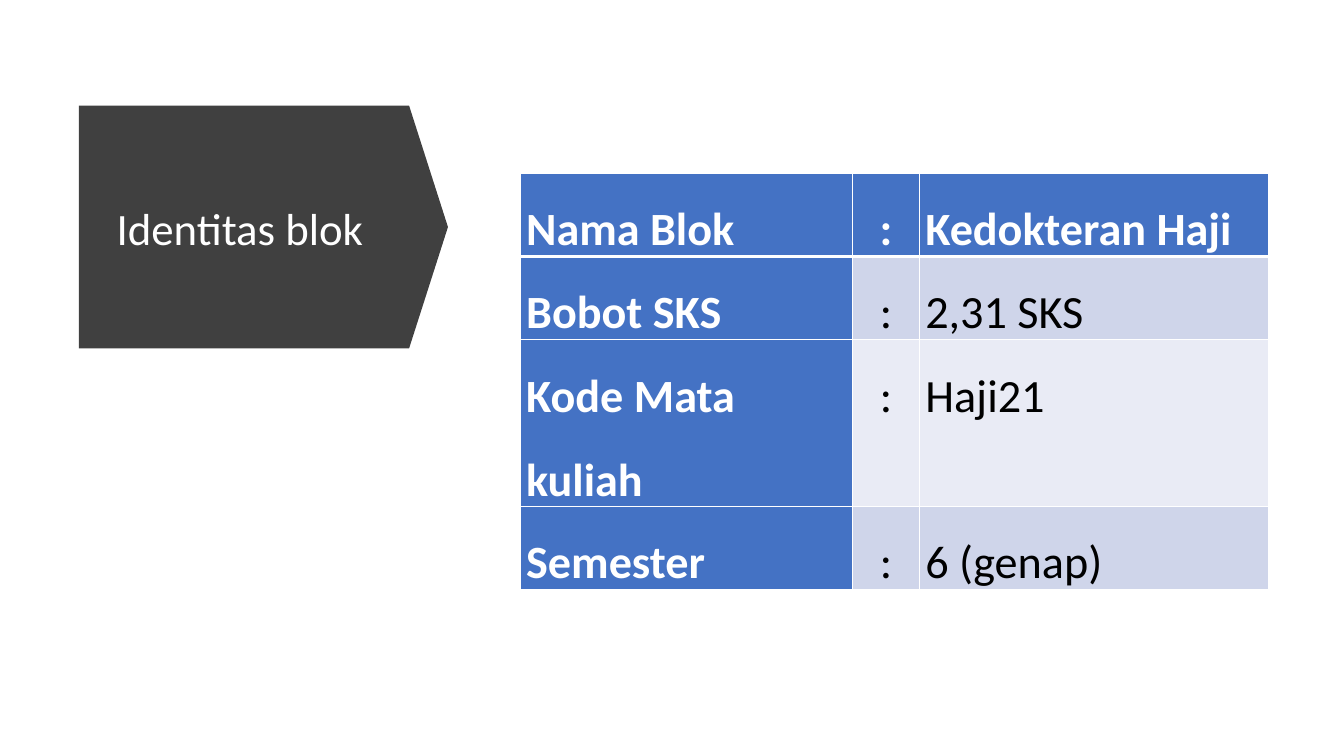
from dataclasses import dataclass

from lxml import etree
from pptx import Presentation
from pptx import util as u
from pptx.dml.color import RGBColor
from pptx.enum import shapes, text
from pptx.oxml.ns import qn


@dataclass(frozen=True)
class Theme:
    font: str = "Calibri"
    white: str = "FFFFFF"
    black: str = "000000"
    dark: str = "404040"
    blue: str = "4472C4"
    band: str = "CFD5EA"
    light_band: str = "E9EBF5"
    title_size: float = 32
    cell_size: float = 33
    thin: float = 1
    thick: float = 3


@dataclass(frozen=True)
class BlockRow:
    label: str
    value: str
    fill: str
    height: float = 1.98


THEME = Theme()
COLUMNS = (8.38, 1.68, 8.79)
ROWS = (
    BlockRow("Nama Blok", "Kedokteran Haji", THEME.blue),
    BlockRow("Bobot SKS", "2,31 SKS", THEME.band),
    BlockRow("Kode Mata kuliah", "Haji21", THEME.light_band, 4.06),
    BlockRow("Semester", "6 (genap)", THEME.band),
)


def write(tf, content: str, size: float, color: str, bold: bool, spacing: float,
          align=text.PP_ALIGN.LEFT) -> None:
    p = tf.paragraphs[0]
    p.alignment, p.line_spacing = align, spacing
    r = p.add_run()
    r.text = content
    font_format = {"name": THEME.font, "size": u.Pt(size), "bold": bold}
    for name, value in font_format.items():
        setattr(r.font, name, value)
    r.font.color.rgb = RGBColor.from_string(color)


def add_border(cell, side: str, width: float) -> None:
    """Draw one white cell edge; must run before the cell is filled."""
    ln = etree.SubElement(cell._tc.get_or_add_tcPr(), qn(f"a:ln{side}"), w=str(u.Pt(width)))
    fill = etree.SubElement(ln, qn("a:solidFill"))
    etree.SubElement(fill, qn("a:srgbClr"), val=THEME.white)


def add_title_arrow(s) -> None:
    sp = s.shapes.add_shape(shapes.MSO_SHAPE.DOWN_ARROW,
                            u.Cm(3.58), u.Cm(1.07), u.Cm(6.12), u.Cm(9.3))
    sp.rotation = 270
    sp.adjustments[0], sp.adjustments[1] = 1, 0.16
    sp.shadow.inherit = False
    sp.fill.solid()
    sp.fill.fore_color.rgb = RGBColor.from_string(THEME.dark)
    sp.line.fill.background()

    tf = s.shapes.add_textbox(u.Cm(2.69), u.Cm(3.35), u.Cm(7.42), u.Cm(4.95)).text_frame
    tf.word_wrap = True
    tf.vertical_anchor = text.MSO_ANCHOR.MIDDLE
    write(tf, "Identitas blok", THEME.title_size, THEME.white, False, 0.9)


def format_cell(cell, row: int, column: int, content: str) -> None:
    cell_format = {"margin_left": u.Cm(0.15), "margin_right": u.Cm(0.15),
                   "margin_top": 0, "margin_bottom": 0}
    for name, value in cell_format.items():
        setattr(cell, name, value)
    thick_side = {0: "B", 1: "T"}.get(row)
    for side in "LRTB":
        add_border(cell, side, THEME.thick if side == thick_side else THEME.thin)
    heading = row == 0 or column == 0
    cell.fill.solid()
    cell.fill.fore_color.rgb = RGBColor.from_string(THEME.blue if heading else ROWS[row].fill)
    write(cell.text_frame, content, THEME.cell_size,
          THEME.white if heading else THEME.black, heading, 1.5,
          text.PP_ALIGN.CENTER if column == 1 else text.PP_ALIGN.LEFT)


def add_block_table(s) -> None:
    table = s.shapes.add_table(len(ROWS), len(COLUMNS), u.Cm(13.11), u.Cm(4.37),
                               u.Cm(sum(COLUMNS)), u.Cm(sum(r.height for r in ROWS))).table
    for column, width in zip(table.columns, COLUMNS):
        column.width = u.Cm(width)
    for i, row in enumerate(ROWS):
        table.rows[i].height = u.Cm(row.height)
        for j, content in enumerate((row.label, ":", row.value)):
            format_cell(table.cell(i, j), i, j, content)


def main() -> None:
    prs = Presentation()
    prs.slide_width, prs.slide_height = u.Cm(33.87), u.Cm(19.05)
    s = prs.slides.add_slide(prs.slide_layouts[6])
    add_title_arrow(s)
    add_block_table(s)
    prs.save("out.pptx")


if __name__ == "__main__":
    main()
